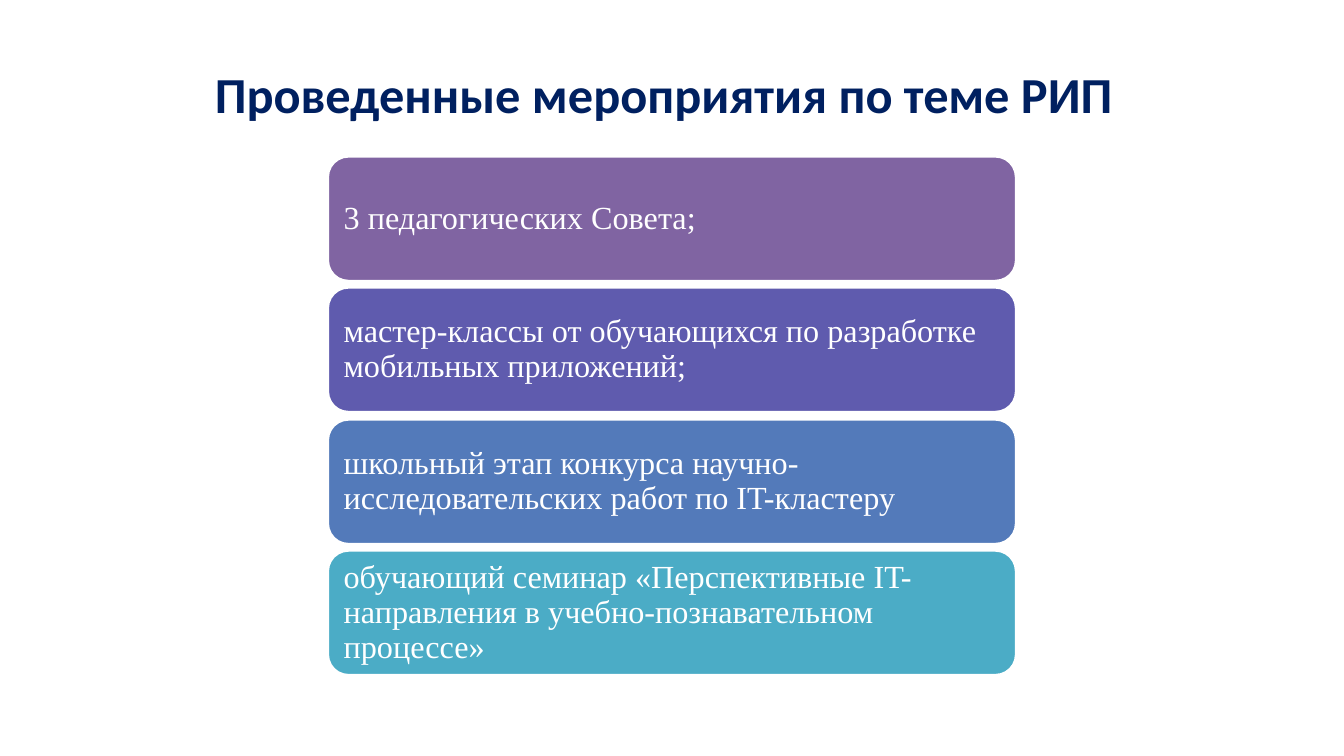
from pptx import Presentation
from pptx.dml.color import RGBColor
from pptx.enum.shapes import MSO_SHAPE as Shape
from pptx.enum.text import MSO_ANCHOR as Anchor, PP_ALIGN as Align
from pptx.util import Emu, Pt

PX = 9144  # 100 px to the inch


def px(*lengths):
    return [Emu(length * PX) for length in lengths]


def color(value):
    return RGBColor.from_string(value)


class SlideBuilder:
    title_font, body_font = "Calibri", "Times New Roman"
    navy, white = "002060", "FFFFFF"

    def __init__(self, deck):
        self.slide = deck.slides.add_slide(deck.slide_layouts[6])
        background = self.slide.background.fill
        background.solid()
        background.fore_color.rgb = color(self.white)

    def text(self, bounds, words, font, size, ink, bold=False,
             align=Align.LEFT, line_spacing=1.0):
        box = self.slide.shapes.add_textbox(*px(*bounds))
        frame = box.text_frame
        frame.word_wrap = True
        frame.vertical_anchor = Anchor.MIDDLE
        frame.margin_left, frame.margin_top, frame.margin_right, frame.margin_bottom = px(10, 5, 10, 5)
        para = frame.paragraphs[0]
        para.alignment = align
        para.line_spacing = line_spacing
        span = para.add_run()
        span.text = words
        span.font.name = font
        span.font.size = Pt(size)
        span.font.bold = bold
        span.font.color.rgb = color(ink)

    def title(self, bounds, words):
        self.text(bounds, words, self.title_font, 36, self.navy, True, Align.CENTER)

    def card(self, bounds, words, fill):
        card = self.slide.shapes.add_shape(Shape.ROUNDED_RECTANGLE, *px(*bounds))
        card.shadow.inherit = False
        card.fill.solid()
        card.fill.fore_color.rgb = color(fill)
        card.line.color.rgb = color(self.white)
        card.line.width = Pt(2)
        # The text area sits inside the rounded corners
        left, top, width, height = bounds
        inset = 6
        inner = (left + inset, top + inset, width - 2 * inset, height - 2 * inset)
        self.text(inner, words, self.body_font, 23, self.white, line_spacing=0.9)


EVENTS = [
    ("3 педагогических Совета;", "8064A2"),
    ("мастер-классы от обучающихся по разработке мобильных приложений;", "5F5BAE"),
    ("школьный этап конкурса научно-исследовательских работ по IT-кластеру", "537ABA"),
    ("обучающий семинар «Перспективные IT-направления в учебно-познавательном процессе»", "4BACC6"),
]


def main():
    deck = Presentation()
    deck.slide_width, deck.slide_height = px(1333, 750)
    page = SlideBuilder(deck)

    # Heading
    page.title((178, 30, 961, 125), "Проведенные мероприятия по теме РИП")

    # Stack of event cards, evenly spaced from first top to last top
    first_top, last_top = 155, 546
    pitch = (last_top - first_top) / (len(EVENTS) - 1)
    for index, (words, fill) in enumerate(EVENTS):
        page.card((325, round(first_top + index * pitch), 683, 124), words, fill)

    deck.save("out.pptx")


if __name__ == "__main__":
    main()
